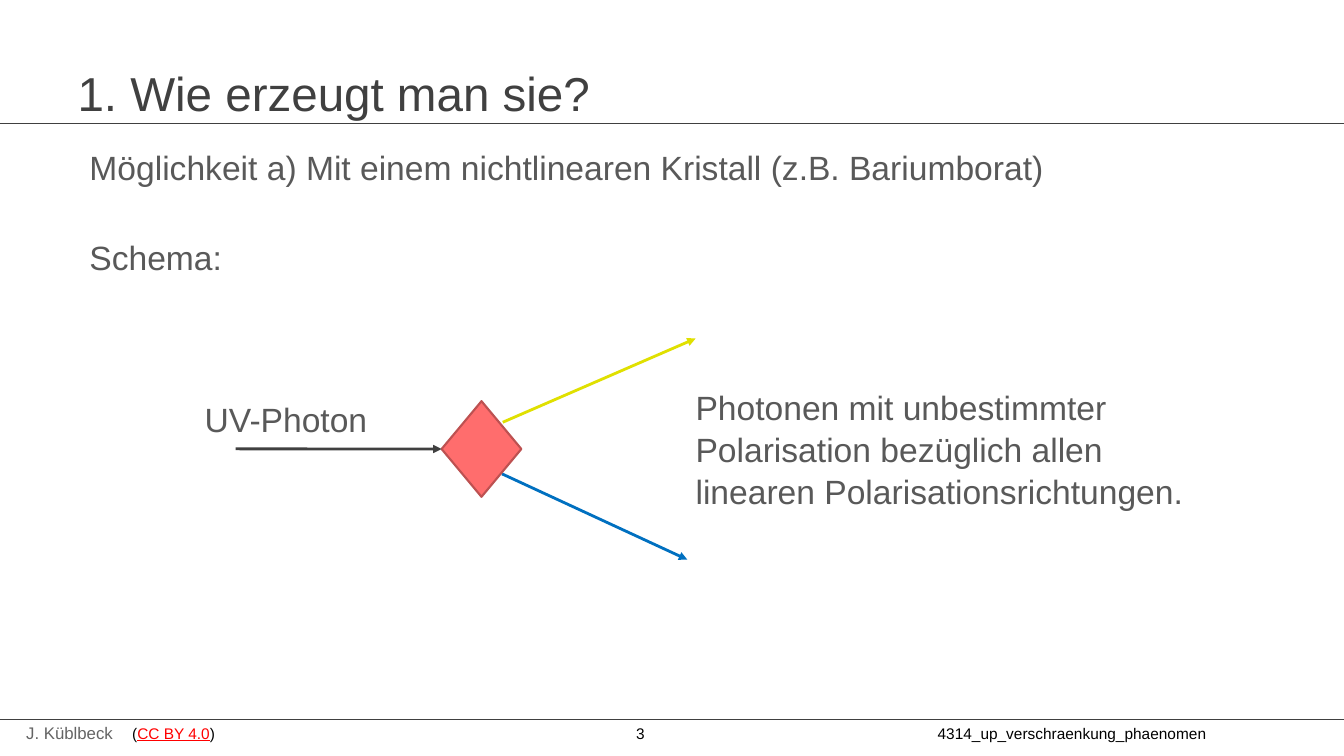
from dataclasses import dataclass
from typing import Optional

from lxml.etree import SubElement
from pptx import Presentation
from pptx.dml.color import RGBColor
from pptx.enum.shapes import MSO_CONNECTOR, MSO_SHAPE
from pptx.enum.text import MSO_ANCHOR, MSO_AUTO_SIZE, PP_ALIGN
from pptx.oxml.ns import qn
from pptx.util import Cm, Pt


@dataclass(frozen=True)
class Theme:
    font: str = "Arial"
    dark: str = "404040"
    body: str = "595959"
    author: str = "646464"
    black: str = "000000"
    license: str = "FF0000"
    blue: str = "0070C0"
    yellow: str = "E0E000"
    crystal: str = "FF6D6D"
    crystal_edge: str = "BD5151"
    title_size: float = 34
    body_size: float = 24
    author_size: float = 12
    footer_size: float = 11
    line_spacing: float = 1.04


THEME = Theme()


@dataclass(frozen=True)
class Line:
    start: tuple[float, float]
    end: tuple[float, float]
    color: str
    width: float
    arrow: bool = False


@dataclass(frozen=True)
class Label:
    text: str
    box: tuple[float, float, float, float]
    size: float
    color: str
    inset: tuple[float, float] = (0, 0)
    spacing: Optional[float] = None
    before: float = 0


SLIDE_WIDTH, SLIDE_HEIGHT = 33.87, 19.05
CRYSTAL_BOX = (11.13, 10.11, 2.01, 2.41)

RULES = [Line((0, y), (SLIDE_WIDTH, y), THEME.dark, 0.75) for y in (3.12, 18.13)]
PUMP = Line((5.94, 11.31), (11.13, 11.31), THEME.dark, 2, True)
RAYS = [
    Line((12.65, 11.94), (17.32, 14.1), THEME.blue, 2, True),
    Line((12.67, 10.64), (17.53, 8.53), THEME.yellow, 2, True),
]
DIAGRAM_LABELS = [
    Label("Photonen mit unbestimmter Polarisation bezüglich allen\v"
          "linearen Polarisationsrichtungen.", (16.13, 9.58, 15.8, 3.4),
          THEME.body_size, THEME.body, (1.4, 0.13), THEME.line_spacing, 3),
    Label("UV-Photon", (3.76, 9.88, 6.6, 1.7),
          THEME.body_size, THEME.body, (1.4, 0.13), THEME.line_spacing, 3),
]
LICENSE = Label("(CC BY 4.0)", (3.33, 18.24, 4, 0.48), THEME.footer_size, THEME.black)
FOOTER_LABELS = [
    Label("J. Küblbeck", (0.41, 18.08, 2.9, 0.76),
          THEME.author_size, THEME.author, (0.25, 0.13)),
    Label("3", (16.03, 18.24, 1, 0.48), THEME.footer_size, THEME.black),
    Label("4314_up_verschraenkung_phaenomen", (23.63, 18.24, 9, 0.48),
          THEME.footer_size, THEME.black),
]


def style_run(run, size: float, color: str) -> None:
    run.font.name = THEME.font
    run.font.size = Pt(size)
    run.font.color.rgb = RGBColor.from_string(color)


def place(shape, box: tuple[float, float, float, float]) -> None:
    shape.left, shape.top, shape.width, shape.height = map(Cm, box)


def add_line(slide, line: Line):
    connector = slide.shapes.add_connector(
        MSO_CONNECTOR.STRAIGHT, *map(Cm, line.start + line.end))
    connector.line.color.rgb = RGBColor.from_string(line.color)
    connector.line.width = Pt(line.width)
    if line.arrow:
        SubElement(connector.line._get_or_add_ln(), qn("a:tailEnd"), type="triangle")
    SubElement(connector._element.spPr, qn("a:effectLst"))
    return connector


def add_label(slide, label: Label):
    shape = slide.shapes.add_textbox(*map(Cm, label.box))
    text_frame = shape.text_frame
    text_frame.word_wrap = True
    text_frame.margin_left = Cm(label.inset[0])
    text_frame.margin_right = Cm(min(label.inset[0], 0.25))
    text_frame.margin_top = text_frame.margin_bottom = Cm(label.inset[1])
    text_frame.text = label.text
    paragraph = text_frame.paragraphs[0]
    paragraph.space_before = Pt(label.before)
    paragraph.line_spacing = label.spacing
    for run in paragraph.runs:
        style_run(run, label.size, label.color)
    return shape


def fill_title(slide) -> None:
    title = slide.shapes.title
    place(title, (1.7, 1.52, 30.48, 1.6))
    text_frame = title.text_frame
    text_frame.text = "1. Wie erzeugt man sie?"
    text_frame.auto_size = MSO_AUTO_SIZE.NONE
    text_frame.vertical_anchor = MSO_ANCHOR.MIDDLE
    paragraph = text_frame.paragraphs[0]
    paragraph.alignment = PP_ALIGN.LEFT
    style_run(paragraph.runs[0], THEME.title_size, THEME.dark)


def fill_body(slide) -> None:
    body = slide.placeholders[1]
    place(body, (1.7, 3.53, 30.48, 14))
    text_frame = body.text_frame
    text_frame.text = ("Möglichkeit a) Mit einem nichtlinearen Kristall "
                       "(z.B. Bariumborat)\nSchema:")
    text_frame.auto_size = MSO_AUTO_SIZE.NONE
    for paragraph, before in zip(text_frame.paragraphs, (3, 34.5)):
        paragraph.space_before = Pt(before)
        paragraph.line_spacing = THEME.line_spacing
        style_run(paragraph.runs[0], THEME.body_size, THEME.body)
        properties = paragraph._p.get_or_add_pPr()
        properties.set("marL", str(Cm(0.3)))
        properties.set("indent", "0")
        SubElement(properties, qn("a:buNone"))


def add_crystal(slide):
    crystal = slide.shapes.add_shape(MSO_SHAPE.DIAMOND, *map(Cm, CRYSTAL_BOX))
    crystal.shadow.inherit = False
    crystal.fill.solid()
    crystal.fill.fore_color.rgb = RGBColor.from_string(THEME.crystal)
    crystal.line.color.rgb = RGBColor.from_string(THEME.crystal_edge)
    crystal.line.width = Pt(1.5)
    return crystal


def add_license(slide) -> None:
    paragraph = add_label(slide, LICENSE).text_frame.paragraphs[0]
    paragraph.text = "("
    for text in ("CC BY 4.0", ")"):
        paragraph.add_run().text = text
    for run in paragraph.runs:
        style_run(run, LICENSE.size, LICENSE.color)
    name = paragraph.runs[1]
    name.font.underline = True
    name.font.color.rgb = RGBColor.from_string(THEME.license)


def main() -> None:
    presentation = Presentation()
    presentation.slide_width = Cm(SLIDE_WIDTH)
    presentation.slide_height = Cm(SLIDE_HEIGHT)
    slide = presentation.slides.add_slide(presentation.slide_layouts[1])

    # Title, text and rules
    fill_title(slide)
    fill_body(slide)
    for rule in RULES:
        add_line(slide, rule)

    # Diagram: pump photon, crystal, photon pair
    for ray in RAYS:
        add_line(slide, ray)
    crystal = add_crystal(slide)
    add_line(slide, PUMP).end_connect(crystal, 1)
    for label in DIAGRAM_LABELS:
        add_label(slide, label)

    # Footer
    add_license(slide)
    for label in FOOTER_LABELS:
        add_label(slide, label)

    presentation.save("out.pptx")


if __name__ == "__main__":
    main()
